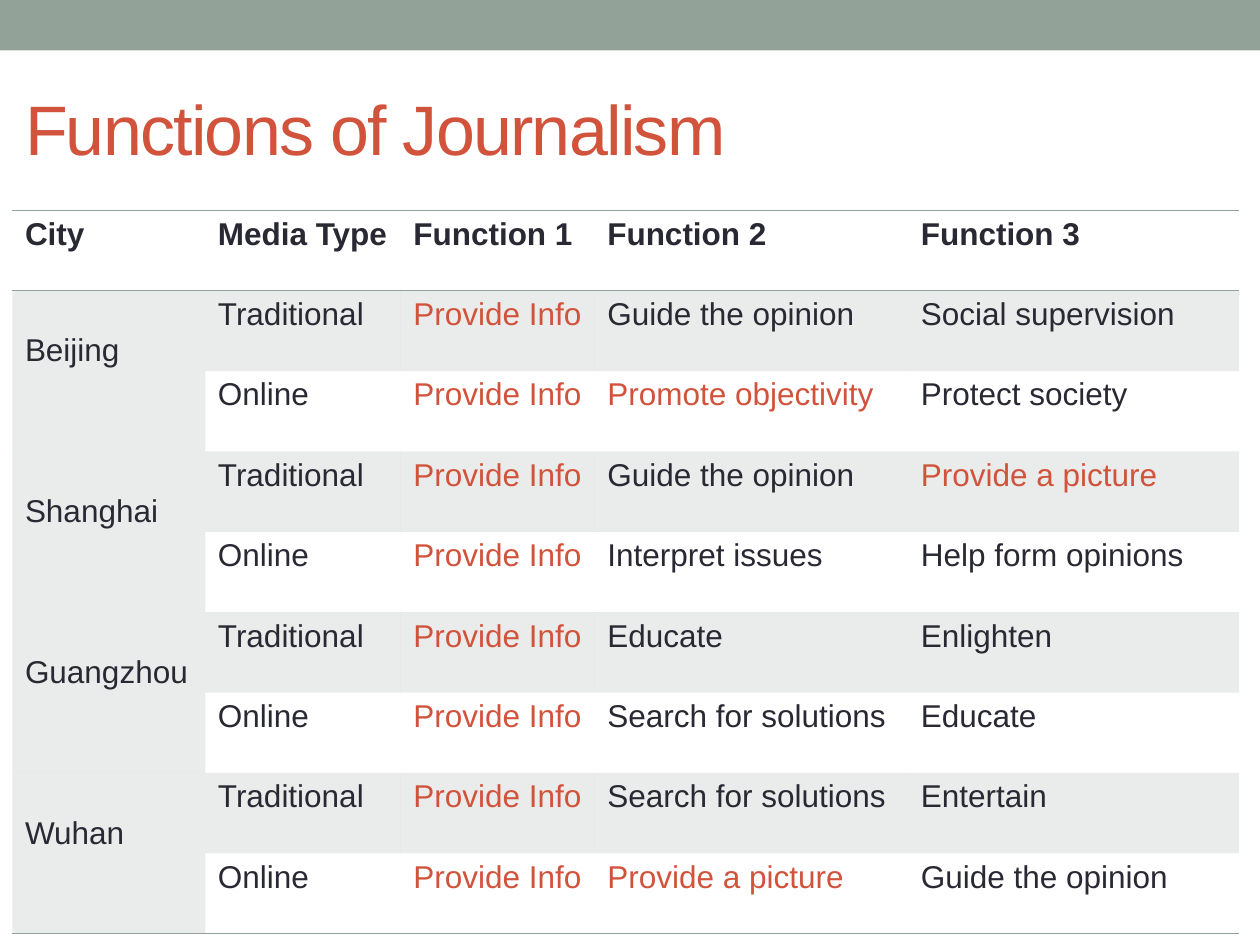
"""Build a slide with a table of journalism functions by city and media type."""
import pptx
import pptx.dml.color
import pptx.enum.shapes
import pptx.enum.text
import pptx.oxml
import pptx.oxml.ns
import pptx.util
import lxml.etree

Cm = pptx.util.Cm
Pt = pptx.util.Pt
COLORS = {"sage": "93A299", "red": "D2533C", "ink": "292934"}
NO_STYLE = "{2D5ABB26-0587-4C30-8999-92F81FD0307C}"
HEADERS = ["City", "Media Type", "Function 1", "Function 2", "Function 3"]
CITIES = ["Beijing", "Shanghai", "Guangzhou", "Wuhan"]
FUNCTIONS = [
    ["Guide the opinion", "Social supervision"],
    ["Promote objectivity", "Protect society"],
    ["Guide the opinion", "Provide a picture"],
    ["Interpret issues", "Help form opinions"],
    ["Educate", "Enlighten"],
    ["Search for solutions", "Educate"],
    ["Search for solutions", "Entertain"],
    ["Provide a picture", "Guide the opinion"],
]
HIGHLIGHTS = {"Provide Info", "Promote objectivity", "Provide a picture"}
COLUMN_WIDTHS = [3.89, 3.94, 3.91, 6.32, 6.67]
ROW_HEIGHT = 1.62


def rgb(name):
    return pptx.dml.color.RGBColor.from_string(COLORS[name])


def add_border(cell, side, position):
    line = pptx.oxml.parse_xml(
        f'<a:{side} {pptx.oxml.ns.nsdecls("a")} w="12700"><a:solidFill>'
        f'<a:srgbClr val="{COLORS["sage"]}"/></a:solidFill></a:{side}>'
    )
    cell._tc.get_or_add_tcPr().insert(position, line)


deck = pptx.Presentation()
deck.slide_width = Cm(25.4)
deck.slide_height = Cm(19.05)
page = deck.slides.add_slide(deck.slide_layouts[5])

band = page.shapes.add_shape(
    pptx.enum.shapes.MSO_SHAPE.RECTANGLE, 0, 0, deck.slide_width, Cm(1.02)
)
band.shadow.inherit = False
band.fill.solid()
band.fill.fore_color.rgb = rgb("sage")
band.line.fill.background()

title = page.shapes.title
title.left, title.top, title.width, title.height = Cm(0.25), Cm(1.2), Cm(22.86), Cm(2.74)
title.text_frame.vertical_anchor = pptx.enum.text.MSO_ANCHOR.MIDDLE
para = title.text_frame.paragraphs[0]
para.alignment = pptx.enum.text.PP_ALIGN.LEFT
para.font.name = "Arial"
para.font.size = Pt(40)
para.font.color.rgb = rgb("red")
span = para.add_run()
span.text = "Functions of Journalism"
span.font._element.set("spc", "-100")

rows = [HEADERS]
for index, functions in enumerate(FUNCTIONS):
    city = "" if index % 2 else CITIES[index // 2]
    media = "Online" if index % 2 else "Traditional"
    rows.append([city, media, "Provide Info", *functions])

frame = page.shapes.add_table(
    len(rows), len(HEADERS), Cm(0.25), Cm(4.24),
    Cm(sum(COLUMN_WIDTHS)), Cm(ROW_HEIGHT * len(rows)),
)
table = frame.table
table._tbl.tblPr.find(pptx.oxml.ns.qn("a:tableStyleId")).text = NO_STYLE
for column, width in zip(table.columns, COLUMN_WIDTHS):
    column.width = Cm(width)
for row in table.rows:
    row.height = Cm(ROW_HEIGHT)

last_row = len(rows) - 1
for row_index, texts in enumerate(rows):
    for column_index, text in enumerate(texts):
        cell = table.cell(row_index, column_index)
        is_city = row_index > 0 and column_index == 0
        if is_city or row_index % 2:
            cell.fill.solid()
            cell.fill.fore_color.rgb = rgb("sage")
            color = cell._tc.tcPr.find(".//" + pptx.oxml.ns.qn("a:srgbClr"))
            lxml.etree.SubElement(color, pptx.oxml.ns.qn("a:alpha"), val="20000")
        else:
            cell.fill.background()
        if row_index == 0:
            add_border(cell, "lnT", 0)
            add_border(cell, "lnB", 1)
        elif row_index == last_row or (is_city and row_index == last_row - 1):
            add_border(cell, "lnB", 0)
        if is_city:
            cell.margin_top = Cm(0.86)
        cell.text = text
        para = cell.text_frame.paragraphs[0]
        para.font.name = "Arial"
        para.font.size = Pt(18)
        para.font.bold = row_index == 0
        para.font.color.rgb = rgb("red" if text in HIGHLIGHTS else "ink")

for row_index in range(1, len(rows), 2):
    table.cell(row_index, 0).merge(table.cell(row_index + 1, 0))

deck.save("out.pptx")
